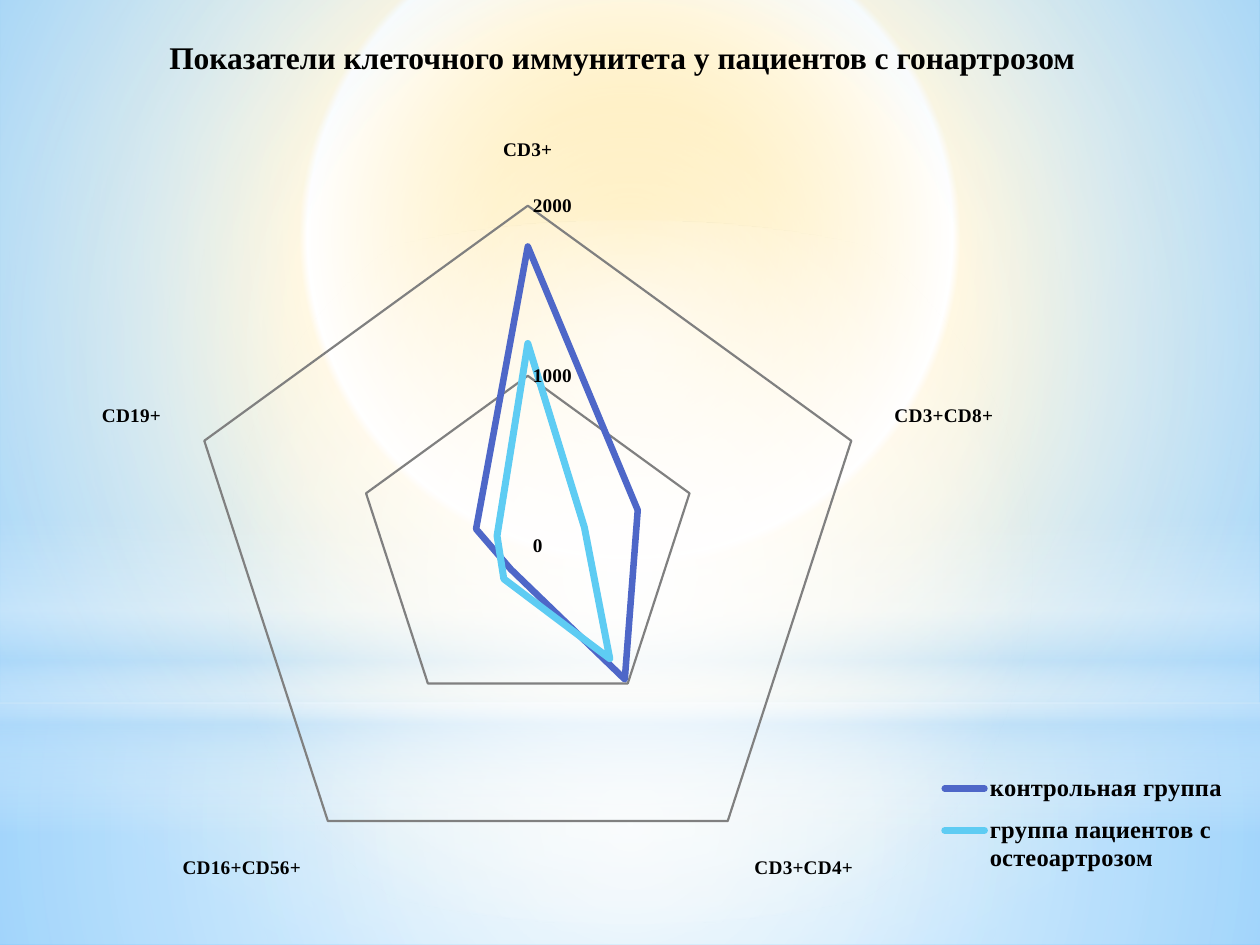
import pptx
import pptx.chart.data
import pptx.dml.color
import pptx.enum.chart
import pptx.enum.shapes
import pptx.enum.text
import pptx.oxml
import pptx.oxml.ns
import pptx.util

Inches, Pt = pptx.util.Inches, pptx.util.Pt
RGBColor = pptx.dml.color.RGBColor
SHAPE = pptx.enum.shapes.MSO_SHAPE
CHART = pptx.enum.chart
qn = pptx.oxml.ns.qn

FONT = "Times New Roman"
HEADING = "Показатели клеточного иммунитета у пациентов с гонартрозом"
MARKERS = ["CD3+", "CD3+CD8+", "CD3+CD4+", "CD16+CD56+", "CD19+"]
GROUPS = [
    ("контрольная группа", [1760, 680, 970, 170, 320], "control", 3.75),
    ("группа пациентов с остеоартрозом", [1190, 350, 820, 240, 190], "patients", 4),
]
COLORS = {
    "text": "000000", "grid": "808080", "control": "4E67C8", "patients": "5ECCF3",
    "white": "FFFFFF", "haze": "B4DCFA", "sun": "FFC000", "glow": "FFD248",
    "cream": "FFECB2", "sky": "5BB9FF",
}
CENTER = (50, 50, 50, 50)
SKY_STOPS = [(0, "sun", 100), (17, "glow", 100), (41, "white", 100),
             (42, "cream", 100), (100, "sky", 100)]
SCENERY = [
    (SHAPE.RECTANGLE, (0, 5.58, 10, 1.92),
     [(0, "white", 91), (37, "white", 76), (100, "haze", 79)], CENTER),
    (SHAPE.RECTANGLE, (0, 0, 10, 5.58),
     [(0, "white", 89), (48, "white", 62), (100, "haze", 79)], CENTER),
    (SHAPE.RECTANGLE, (0, 4.12, 10, 2.5),
     [(0, "white", 0), (29, "white", 30), (45, "haze", 40), (55, "white", 26),
      (65, "haze", 60), (100, "white", 0)], None),
    (SHAPE.OVAL, (0, 1.75, 10, 5.58), [(0, "white", 100), (56, "white", 0)], CENTER),
]
PLOT_AREA = (0.149, 0.119, 0.54, 0.811)
LEGEND_AREA = (0.74, 0.78, 0.24, 0.15)


def color(key):
    return RGBColor.from_string(COLORS[key])


def set_gradient(fill, owner, stops, focus):
    fill.gradient()
    stop_xml = "".join(
        f'<a:gs pos="{pos * 1000}"><a:srgbClr val="{COLORS[key]}">'
        f'<a:alpha val="{alpha * 1000}"/></a:srgbClr></a:gs>'
        for pos, key, alpha in stops)
    if focus:
        left, top, right, bottom = (side * 1000 for side in focus)
        direction = (f'<a:path path="circle"><a:fillToRect l="{left}" t="{top}" '
                     f'r="{right}" b="{bottom}"/></a:path>')
    else:
        direction = '<a:lin ang="5400000" scaled="0"/>'
    gradient = pptx.oxml.parse_xml(
        f'<a:gradFill {pptx.oxml.ns.nsdecls("a")} rotWithShape="1">'
        f'<a:gsLst>{stop_xml}</a:gsLst>{direction}</a:gradFill>')
    previous = owner.find(".//" + qn("a:gradFill"))
    previous.getparent().replace(previous, gradient)


def set_layout(parent, area, position, inner=False):
    for previous in parent.findall(qn("c:layout")):
        parent.remove(previous)
    target = '<c:layoutTarget val="inner"/>' if inner else ""
    modes = '<c:xMode val="edge"/><c:yMode val="edge"/>'
    sizes = "".join(f'<c:{name} val="{value}"/>' for name, value in zip("xywh", area))
    parent.insert(position, pptx.oxml.parse_xml(
        f'<c:layout {pptx.oxml.ns.nsdecls("c")}><c:manualLayout>'
        f'{target}{modes}{sizes}</c:manualLayout></c:layout>'))


def set_font(font, size, name=FONT, bold=True):
    font.name, font.size, font.bold = name, Pt(size), bold
    font.color.rgb = color("text")


def add_scenery(slide):
    set_gradient(slide.background.fill, slide.element, SKY_STOPS, (20, 10, 20, 60))
    for outline, box, stops, focus in SCENERY:
        layer = slide.shapes.add_shape(outline, *map(Inches, box))
        layer.shadow.inherit = False
        layer.line.fill.background()
        set_gradient(layer.fill, layer.element, stops, focus)


def add_radar(slide):
    immunity = pptx.chart.data.CategoryChartData()
    immunity.categories = MARKERS
    for name, values, _, _ in GROUPS:
        immunity.add_series(name, values)
    radar = slide.shapes.add_chart(
        CHART.XL_CHART_TYPE.RADAR, Inches(0), Inches(0.84), Inches(10), Inches(6.66),
        immunity).chart
    radar.has_title = False
    set_font(radar.font, 10, "Lato", False)
    radar.plots[0].vary_by_categories = False

    for axis in (radar.category_axis, radar.value_axis):
        set_font(axis.tick_labels.font, 11)
        axis.major_tick_mark = axis.minor_tick_mark = CHART.XL_TICK_MARK.NONE
        axis.format.line.fill.background()
    radar.category_axis.has_major_gridlines = False
    scale = radar.value_axis
    scale.minimum_scale, scale.maximum_scale, scale.major_unit = 0, 2000, 1000
    scale.has_major_gridlines = True
    scale.major_gridlines.format.line.color.rgb = color("grid")
    scale.major_gridlines.format.line.width = Pt(1.25)

    for series, (_, _, key, width) in zip(radar.plots[0].series, GROUPS):
        series.format.line.color.rgb = color(key)
        series.format.line.width = Pt(width)
        series.marker.style = CHART.XL_MARKER_STYLE.NONE
    for series_xml in radar.element.iter(qn("c:ser")):
        series_xml.find(qn("c:spPr")).find(qn("a:ln")).set("cap", "rnd")

    radar.has_legend = True
    radar.legend.position = CHART.XL_LEGEND_POSITION.RIGHT
    radar.legend.include_in_layout = False
    set_font(radar.legend.font, 14)
    set_layout(radar.element.find(".//" + qn("c:plotArea")), PLOT_AREA, 0, True)
    set_layout(radar.element.find(".//" + qn("c:legend")), LEGEND_AREA, 1)


def add_heading(slide):
    heading = slide.shapes.title
    heading.left, heading.top = Inches(0), Inches(0.1)
    heading.width, heading.height = Inches(9.88), Inches(0.56)
    frame = heading.text_frame
    frame.word_wrap = True
    frame.auto_size = pptx.enum.text.MSO_AUTO_SIZE.SHAPE_TO_FIT_TEXT
    frame.vertical_anchor = pptx.enum.text.MSO_ANCHOR.TOP
    line = frame.paragraphs[0]
    line.alignment = pptx.enum.text.PP_ALIGN.CENTER
    line.line_spacing = 1.5
    line.space_before = Pt(0)
    run = line.add_run()
    run.text = HEADING
    set_font(run.font, 18)
    heading.element.getparent().append(heading.element)


def main():
    deck = pptx.Presentation()
    deck.slide_width, deck.slide_height = Inches(10), Inches(7.5)
    slide = deck.slides.add_slide(deck.slide_layouts[5])
    add_scenery(slide)
    add_radar(slide)
    add_heading(slide)
    deck.save("out.pptx")


if __name__ == "__main__":
    main()
